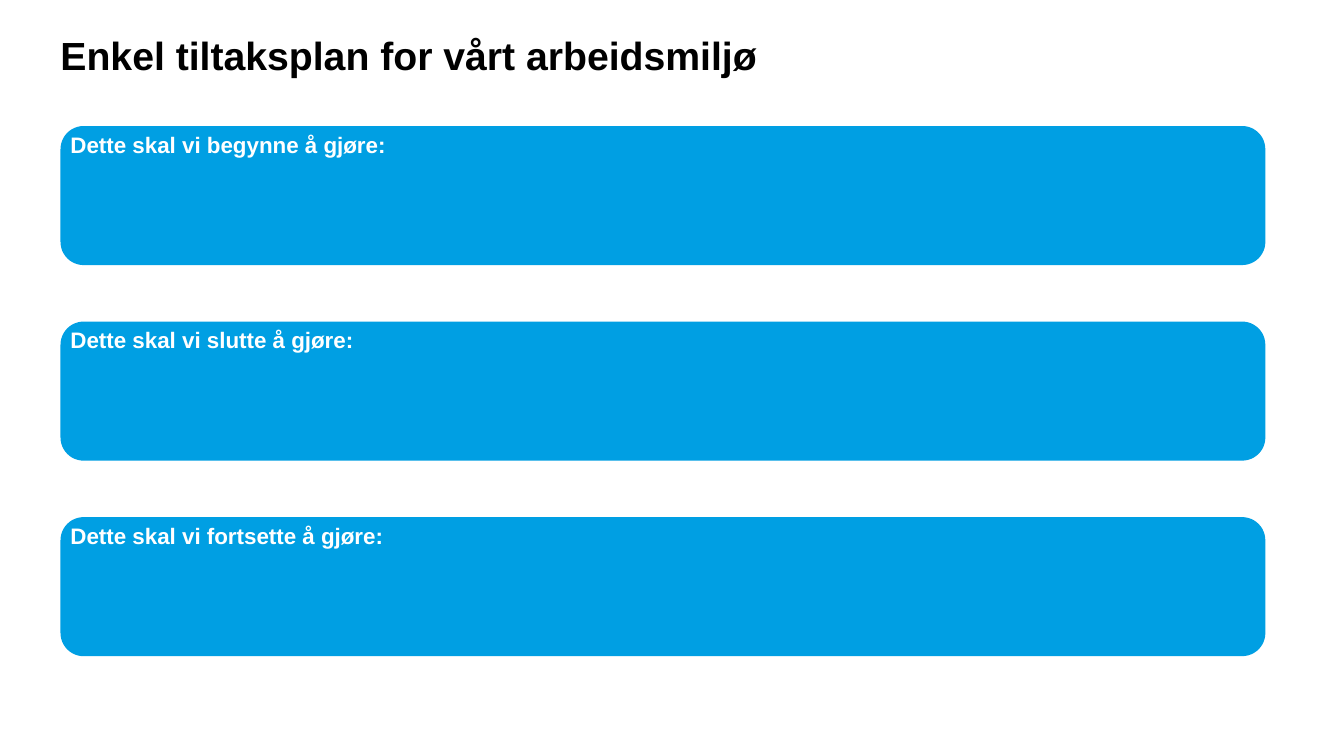
from dataclasses import dataclass

from pptx import Presentation
from pptx.dml.color import RGBColor
from pptx.enum.shapes import MSO_SHAPE
from pptx.enum.text import MSO_ANCHOR, PP_ALIGN
from pptx.slide import Slide
from pptx.text.text import _Paragraph as Paragraph
from pptx.util import Inches, Pt

COLORS = {"title": "000000", "panel": "009FE3", "label": "FFFFFF"}
FONT = "Arial"

# Grid: one column of panels, rows at an equal pitch (inches)
LEFT, PANEL_WIDTH, PANEL_HEIGHT = 0.6, 11.95, 1.38
FIRST_ROW, ROW_PITCH = 1.25, 1.94
LABEL_HEIGHT = 0.37


@dataclass
class Panel:
    row: int
    label: str

    @property
    def top(self) -> float:
        return FIRST_ROW + self.row * ROW_PITCH


PANELS = [
    Panel(0, "Dette skal vi begynne å gjøre:"),
    Panel(1, "Dette skal vi slutte å gjøre:"),
    Panel(2, "Dette skal vi fortsette å gjøre:"),
]


def set_font(paragraph: Paragraph, size: int, color: str) -> None:
    paragraph.alignment = PP_ALIGN.LEFT
    font = paragraph.font
    font.name, font.size, font.bold = FONT, Pt(size), True
    font.color.rgb = RGBColor.from_string(COLORS[color])


def add_title(slide: Slide, text: str) -> None:
    title = slide.shapes.title
    title.left, title.top = Inches(LEFT), Inches(0.36)
    title.width, title.height = Inches(12.14), Inches(0.97)
    frame = title.text_frame
    frame.text = text
    frame.word_wrap = True
    frame.vertical_anchor = MSO_ANCHOR.TOP
    frame.margin_left = frame.margin_right = 0
    frame.margin_top = frame.margin_bottom = 0
    paragraph = frame.paragraphs[0]
    paragraph.line_spacing = 0.9
    set_font(paragraph, 28, "title")


def add_panel(slide: Slide, panel: Panel) -> None:
    left, top, width = Inches(LEFT), Inches(panel.top), Inches(PANEL_WIDTH)
    # Rounded background
    shape = slide.shapes.add_shape(
        MSO_SHAPE.ROUNDED_RECTANGLE, left, top, width, Inches(PANEL_HEIGHT))
    shape.shadow.inherit = False
    shape.fill.solid()
    shape.fill.fore_color.rgb = RGBColor.from_string(COLORS["panel"])
    shape.line.fill.background()
    # Heading along the top edge
    label = slide.shapes.add_textbox(left, top, width, Inches(LABEL_HEIGHT))
    label.text_frame.word_wrap = True
    label.text_frame.text = panel.label
    set_font(label.text_frame.paragraphs[0], 16, "label")


def main() -> None:
    presentation = Presentation()
    presentation.slide_width = Inches(13.33)
    presentation.slide_height = Inches(7.5)
    # Title Only layout
    slide = presentation.slides.add_slide(presentation.slide_layouts[5])
    add_title(slide, "Enkel tiltaksplan for vårt arbeidsmiljø")
    for panel in PANELS:
        add_panel(slide, panel)
    presentation.save("out.pptx")


if __name__ == "__main__":
    main()
